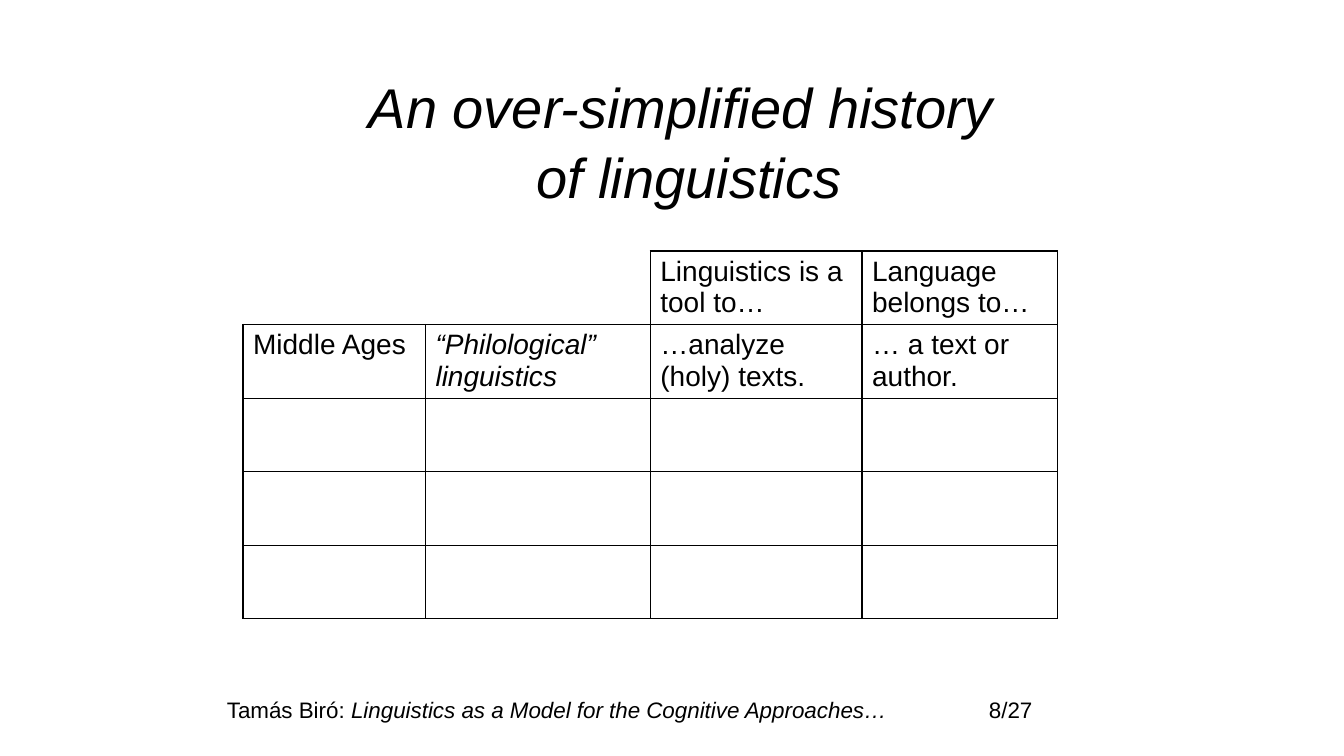
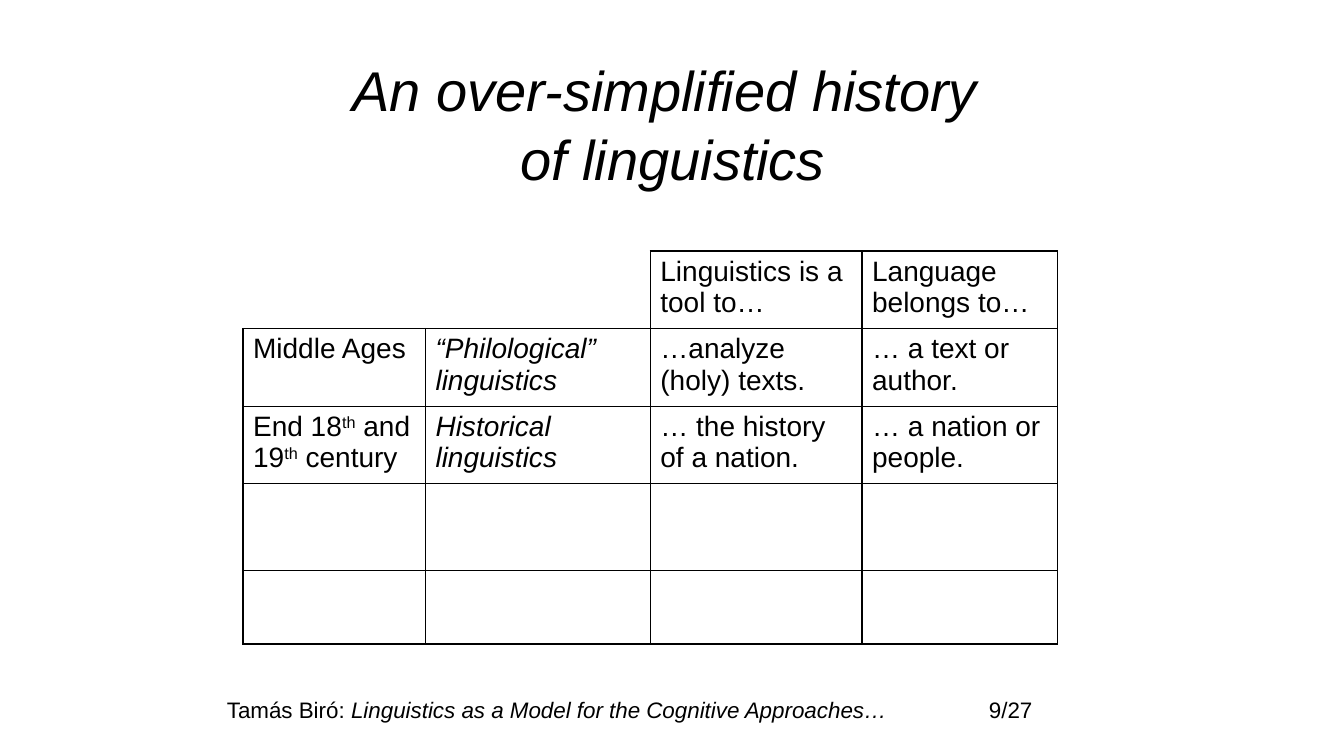
"""Build two slides that fill in a short history of linguistics."""
from lxml.etree import SubElement
from pptx import Presentation
from pptx.dml.color import RGBColor
from pptx.enum.text import MSO_ANCHOR, MSO_AUTO_SIZE, PP_ALIGN
from pptx.oxml.ns import qn
from pptx.util import Inches, Pt

COLORS = {"text": "000000", "border": "000000", "background": "FFFFFF"}
FONT = "Arial"
ITALIC = {"italic": True}
SUPERSCRIPT = "30000"
TITLE_LINES = ("An over-simplified history ", "of linguistics")
FOOTER = [("Tamás Biró: ", {}),
          ("Linguistics as a Model for the Cognitive Approaches…", ITALIC)]
PAGE_COUNT = 27
COLUMN_WIDTHS = (1.81, 2.23, 2.1, 1.94)
ROW_COUNT = 5
BLANK_CORNER = {(0, 0): "LRT", (0, 1): "LT"}

HEADER = ["", "", "Linguistics is a tool to…", "Language belongs to…"]
MIDDLE_AGES = ["Middle Ages", [("“Philological” linguistics", ITALIC)],
               "…analyze (holy) texts.", "… a text or author."]
NINETEENTH_CENTURY = [
    [("End 18", {}), ("th", {}, SUPERSCRIPT), (" and 19", {}),
     ("th", {}, SUPERSCRIPT), (" century", {})],
    [("Historical linguistics", ITALIC)],
    "… the history of a nation.", "… a nation or people."]
EMPTY_ROW = [""] * len(COLUMN_WIDTHS)

SLIDES = [
    {"page": 8, "title_at": (2.58, 0.69), "row_heights": (0.73,) * ROW_COUNT,
     "rows": [HEADER, MIDDLE_AGES]},
    {"page": 9, "title_at": (2.42, 0.52),
     "row_heights": (0.77, 0.77, 0.77, 0.86, 0.73),
     "rows": [HEADER, MIDDLE_AGES, NINETEENTH_CENTURY]},
]


class Deck:
    """Hold the shared style and the current slide."""

    def __init__(self):
        """Start an empty widescreen presentation."""
        self.presentation = Presentation()
        self.presentation.slide_width = Inches(13.33)
        self.presentation.slide_height = Inches(7.5)
        self.slide = None

    def add_slide(self):
        """Add a title-only slide with a plain background."""
        self.slide = self.presentation.slides.add_slide(
            self.presentation.slide_layouts[5])
        fill = self.slide.background.fill
        fill.solid()
        fill.fore_color.rgb = RGBColor.from_string(COLORS["background"])

    def add_runs(self, paragraph, pieces, size):
        """Add a string or a list of formatted pieces as runs."""
        if isinstance(pieces, str):
            pieces = [(pieces, {})]
        for text, extra, *baseline in pieces:
            run = paragraph.add_run()
            run.text = text
            values = {"name": FONT, "size": Pt(size), "bold": False, **extra}
            for attribute, value in values.items():
                setattr(run.font, attribute, value)
            run.font.color.rgb = RGBColor.from_string(COLORS["text"])
            if baseline:
                run._r.get_or_add_rPr().set("baseline", baseline[0])

    def format_frame(self, frame):
        """Remove insets and anchor wrapped text at the top."""
        values = {"word_wrap": True, "auto_size": MSO_AUTO_SIZE.NONE,
                  "vertical_anchor": MSO_ANCHOR.TOP, "margin_left": 0,
                  "margin_right": 0, "margin_top": 0, "margin_bottom": 0}
        for attribute, value in values.items():
            setattr(frame, attribute, value)

    def add_title(self, left, top):
        """Place the two-line italic title."""
        title = self.slide.shapes.title
        place = {"left": left, "top": top, "width": 8.5, "height": 1.7}
        for attribute, value in place.items():
            setattr(title, attribute, Inches(value))
        self.format_frame(title.text_frame)
        paragraph = title.text_frame.paragraphs[0]
        paragraph.alignment = PP_ALIGN.CENTER
        paragraph.line_spacing = 1.04
        first, second = TITLE_LINES
        self.add_runs(paragraph, [(first, ITALIC)], 40)
        paragraph.add_line_break()
        self.add_runs(paragraph, [(second, ITALIC)], 40)

    def add_text(self, place, pieces, alignment):
        """Add a footer text box."""
        shape = self.slide.shapes.add_textbox(*map(Inches, place))
        self.format_frame(shape.text_frame)
        paragraph = shape.text_frame.paragraphs[0]
        paragraph.alignment = alignment
        self.add_runs(paragraph, pieces, 16)

    def add_footer(self, page):
        """Add the talk name and the page count."""
        self.add_text((2.25, 6.91, 7.01, 0.33), FOOTER, PP_ALIGN.LEFT)
        self.add_text((9.42, 6.91, 0.82, 0.43), f"{page}/{PAGE_COUNT}",
                      PP_ALIGN.RIGHT)

    def add_borders(self, cell, hidden_sides):
        """Draw thin cell borders except on the hidden sides."""
        properties = cell._tc.get_or_add_tcPr()
        for index, side in enumerate("LRTB"):
            line = SubElement(properties, qn(f"a:ln{side}"), w=str(Pt(1)))
            properties.insert(index, line)
            if side in hidden_sides:
                SubElement(line, qn("a:noFill"))
            else:
                fill = SubElement(line, qn("a:solidFill"))
                SubElement(fill, qn("a:srgbClr"), val=COLORS["border"])

    def add_table(self, rows, row_heights):
        """Add the history table with its open top-left corner."""
        table = self.slide.shapes.add_table(
            ROW_COUNT, len(COLUMN_WIDTHS), Inches(2.41), Inches(2.49),
            Inches(sum(COLUMN_WIDTHS)), Inches(sum(row_heights))).table
        table.first_row = table.horz_banding = False
        for column, width in zip(table.columns, COLUMN_WIDTHS):
            column.width = Inches(width)
        for row_index, height in enumerate(row_heights):
            table.rows[row_index].height = Inches(height)
            contents = rows[row_index] if row_index < len(rows) else EMPTY_ROW
            for column_index, pieces in enumerate(contents):
                cell = table.cell(row_index, column_index)
                cell.fill.background()
                self.add_borders(
                    cell, BLANK_CORNER.get((row_index, column_index), ""))
                if pieces:
                    paragraph = cell.text_frame.paragraphs[0]
                    paragraph.space_before = Pt(7)
                    self.add_runs(paragraph, pieces, 20)


def main():
    """Build the slides and save them."""
    deck = Deck()
    for content in SLIDES:
        deck.add_slide()
        deck.add_title(*content["title_at"])
        deck.add_table(content["rows"], content["row_heights"])
        deck.add_footer(content["page"])
    deck.presentation.save("out.pptx")


if __name__ == "__main__":
    main()
